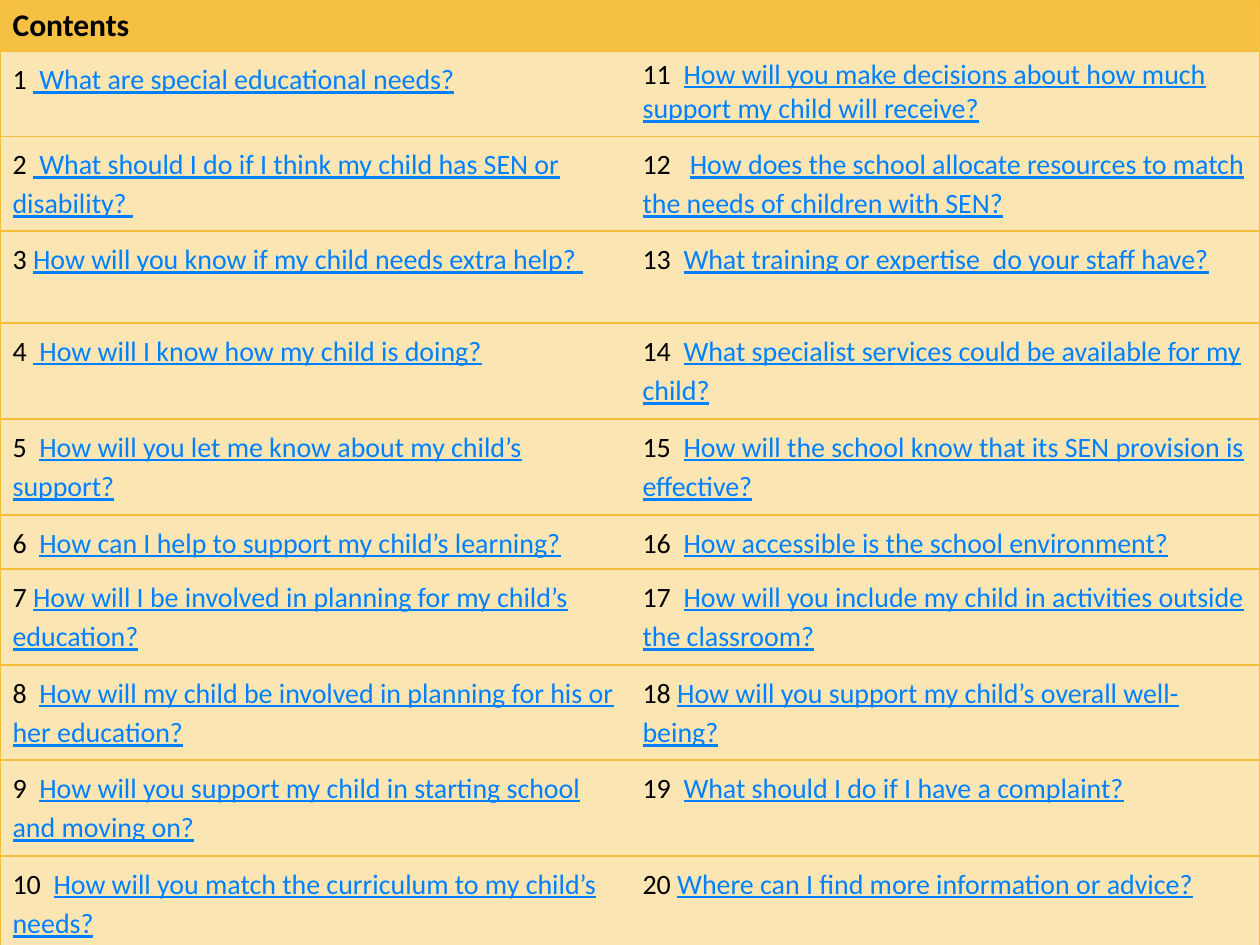
import pptx
import pptx.util
import pptx.dml.color
import pptx.oxml.ns
import lxml.etree

TITLE = "Contents"
LEFT = [
    ("1 ", " What are special educational needs?"),
    ("2 ", " What should I do if I think my child has SEN or disability? "),
    ("3 ", "How will you know if my child needs extra help? "),
    ("4 ", " How will I know how my child is doing?"),
    ("5  ", "How will you let me know about my child’s support?"),
    ("6  ", "How can I help to support my child’s learning?"),
    ("7 ", "How will I be involved in planning for my child’s education?"),
    ("8  ", "How will my child be involved in planning for his or her education?"),
    ("9  ", "How will you support my child in starting school and moving on?"),
    ("10  ", "How will you match the curriculum to my child’s needs?"),
]
RIGHT = [
    ("11  ", "How will you make decisions about how much support my child will receive?"),
    ("12   ", "How does the school allocate resources to match the needs of children with SEN?"),
    ("13  ", "What training or expertise  do your staff have?"),
    ("14  ", "What specialist services could be available for my child?"),
    ("15  ", "How will the school know that its SEN provision is effective?"),
    ("16  ", "How accessible is the school environment?"),
    ("17  ", "How will you include my child in activities outside the classroom?"),
    ("18 ", "How will you support my child’s overall well-being?"),
    ("19  ", "What should I do if I have a complaint?"),
    ("20 ", "Where can I find more information or advice?"),
]
HEIGHTS = [51, 85, 95, 92, 96, 96, 54, 96, 95, 96, 96]
WIDE, HIGH = 1260, 945
BLACK, BLUE, GOLD, HEAD, PALE = "000000", "0080FF", "F4BE3A", "F6C143", "FBE6B3"


def px(n):
    return pptx.util.Emu(round(n * 914400 / 126))


def color(code):
    return pptx.dml.color.RGBColor.from_string(code)


def write(para, text, size=16, shade=BLACK, bold=False, under=False):
    run = para.add_run()
    run.text = text
    font = run.font
    font.name = "Calibri"
    font.size = pptx.util.Pt(size)
    font.bold = bold
    font.underline = under
    font.color.rgb = color(shade)


def style(cell, fill, sides):
    props = cell._tc.get_or_add_tcPr()
    qn = pptx.oxml.ns.qn
    for side in "LRTB":
        line = lxml.etree.SubElement(props, qn("a:ln" + side), w="9525")
        if side in sides:
            solid = lxml.etree.SubElement(line, qn("a:solidFill"))
            lxml.etree.SubElement(solid, qn("a:srgbClr"), val=GOLD)
        else:
            lxml.etree.SubElement(line, qn("a:noFill"))
    cell.fill.solid()
    cell.fill.fore_color.rgb = color(fill)


def main():
    deck = pptx.Presentation()
    deck.slide_width, deck.slide_height = px(WIDE), px(HIGH)
    slide = deck.slides.add_slide(deck.slide_layouts[6])
    slide.background.fill.solid()
    slide.background.fill.fore_color.rgb = color(PALE)

    frame = slide.shapes.add_table(len(HEIGHTS), 2, 0, 0, px(WIDE), px(sum(HEIGHTS)))
    table = frame.table
    table.horz_banding = False
    for row, high in zip(table.rows, HEIGHTS):
        row.height = px(high)

    for col, sides in enumerate(("LTB", "RTB")):
        style(table.cell(0, col), HEAD, "LRTB")
        for row, (num, text) in enumerate((LEFT, RIGHT)[col], 1):
            cell = table.cell(row, col)
            style(cell, PALE, sides)
            para = cell.text_frame.paragraphs[0]
            if num.strip() != "11":
                para.line_spacing = 1.15
            write(para, num)
            write(para, text, shade=BLUE, under=True)

    top = table.cell(0, 0)
    top.merge(table.cell(0, 1))
    write(top.text_frame.paragraphs[0], TITLE, size=18, bold=True)
    deck.save("out.pptx")


if __name__ == "__main__":
    main()
